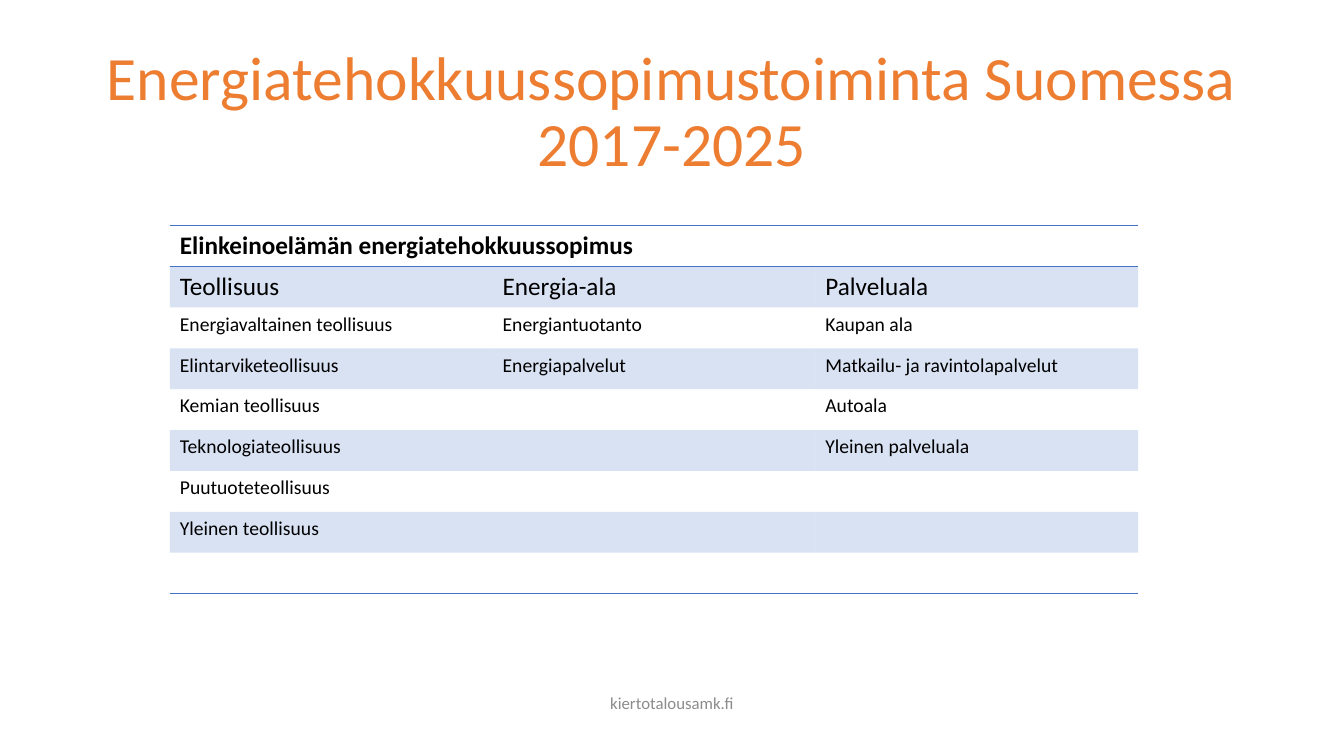
from dataclasses import dataclass

from lxml.etree import SubElement
from pptx import Presentation
from pptx.dml.color import RGBColor
from pptx.enum.text import MSO_ANCHOR, MSO_AUTO_SIZE, PP_ALIGN
from pptx.oxml.ns import qn
from pptx.util import Pt

ORANGE = RGBColor(0xED, 0x7D, 0x31)
BLUE = RGBColor(0x44, 0x72, 0xC4)
GREY = RGBColor(0x8C, 0x8C, 0x8C)
BLACK = RGBColor(0, 0, 0)
PLAIN_TABLE_STYLE = "{2D5ABB26-0587-4C30-8999-92F81FD0307C}"
ROW_HEIGHT = 29.2
COLUMN_WIDTH = 230.55


@dataclass
class Caption:
    text: str
    left: float
    top: float
    width: float
    height: float
    size: float
    color: RGBColor
    spacing: float


TITLE = Caption("Energiatehokkuussopimustoiminta Suomessa 2017-2025",
                66, 28.75, 828, 104.4, 44, ORANGE, 0.9)
FOOTER = Caption("kiertotalousamk.fi", 318, 487.3, 324, 28.75, 12, GREY, 1.0)

AGREEMENT = "Elinkeinoelämän energiatehokkuussopimus"
SECTORS = {
    "Teollisuus": ["Energiavaltainen teollisuus", "Elintarviketeollisuus",
                   "Kemian teollisuus", "Teknologiateollisuus",
                   "Puutuoteteollisuus", "Yleinen teollisuus"],
    "Energia-ala": ["Energiantuotanto", "Energiapalvelut"],
    "Palveluala": ["Kaupan ala", "Matkailu- ja ravintolapalvelut",
                   "Autoala", "Yleinen palveluala"],
}
ROW_COUNT = 9
BORDERS = {0: ("a:lnT", "a:lnB"), ROW_COUNT - 1: ("a:lnB",)}


def apply_format(target, values: dict) -> None:
    for name, value in values.items():
        setattr(target, name, value)


def set_font(paragraph, size: float, color: RGBColor, bold: bool = False) -> None:
    apply_format(paragraph.font, {"name": "Calibri", "size": Pt(size), "bold": bold})
    paragraph.font.color.rgb = color


def write_caption(shape, caption: Caption) -> None:
    apply_format(shape, {"left": Pt(caption.left), "top": Pt(caption.top),
                         "width": Pt(caption.width), "height": Pt(caption.height)})
    frame = shape.text_frame
    apply_format(frame, {"text": caption.text, "word_wrap": True,
                         "auto_size": MSO_AUTO_SIZE.NONE,
                         "vertical_anchor": MSO_ANCHOR.MIDDLE})
    paragraph = frame.paragraphs[0]
    apply_format(paragraph, {"alignment": PP_ALIGN.CENTER,
                             "line_spacing": caption.spacing})
    set_font(paragraph, caption.size, caption.color)


def add_border(cell, side: str) -> None:
    line = SubElement(cell._tc.get_or_add_tcPr(), qn(side), w=str(Pt(1)))
    fill = SubElement(line, qn("a:solidFill"))
    SubElement(fill, qn("a:srgbClr"), val=str(BLUE))


def shade(cell) -> None:
    cell.fill.solid()
    cell.fill.fore_color.rgb = BLUE
    color = cell._tc.tcPr.find(".//" + qn("a:solidFill") + "/" + qn("a:srgbClr"))
    SubElement(color, qn("a:alpha"), val="20000")


def add_sector_table(slide) -> None:
    frame = slide.shapes.add_table(ROW_COUNT, len(SECTORS), Pt(121.3), Pt(161.2),
                                   Pt(COLUMN_WIDTH * len(SECTORS)),
                                   Pt(ROW_HEIGHT * ROW_COUNT))
    table = frame.table
    apply_format(table, {"first_row": False, "horz_banding": False})
    table._tbl.tblPr.find(qn("a:tableStyleId")).text = PLAIN_TABLE_STYLE

    # Agreement heading across all sectors
    table.cell(0, 0).merge(table.cell(0, len(SECTORS) - 1))
    table.cell(0, 0).text = AGREEMENT

    # One column per sector, its name above its branches
    for column, (sector, branches) in enumerate(SECTORS.items()):
        for row, text in enumerate([sector, *branches], start=1):
            table.cell(row, column).text = text

    # Lines, bands and fonts
    for row in range(ROW_COUNT):
        for column in range(len(SECTORS)):
            cell = table.cell(row, column)
            for side in BORDERS.get(row, ()):
                add_border(cell, side)
            if row % 2:
                shade(cell)
            else:
                cell.fill.background()
            set_font(cell.text_frame.paragraphs[0], 18 if row < 2 else 14,
                     BLACK, bold=row == 0)


def main() -> None:
    presentation = Presentation()
    apply_format(presentation, {"slide_width": Pt(960), "slide_height": Pt(540)})
    slide = presentation.slides.add_slide(presentation.slide_layouts[5])

    # Footer and title
    footer = slide.shapes.add_textbox(0, 0, 0, 0)
    write_caption(footer, FOOTER)
    write_caption(slide.shapes.title, TITLE)

    # Sectors and branches of the agreement
    add_sector_table(slide)
    presentation.save("out.pptx")


if __name__ == "__main__":
    main()
